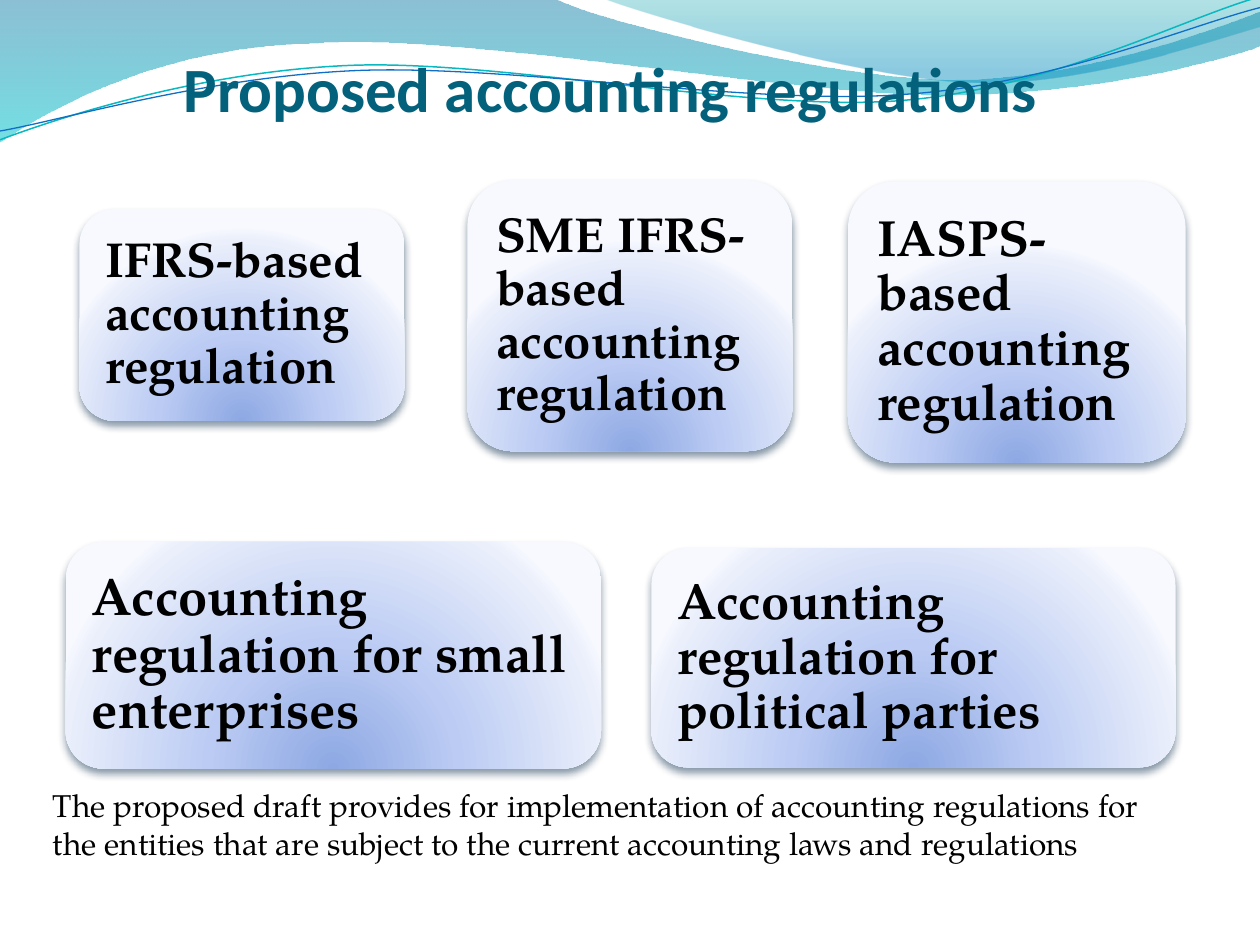
from dataclasses import dataclass
from math import cos, radians, sin

from lxml import etree
from pptx import Presentation
from pptx.dml.color import RGBColor
from pptx.enum.shapes import MSO_SHAPE
from pptx.enum.text import MSO_ANCHOR, PP_ALIGN
from pptx.oxml.ns import nsdecls, qn
from pptx.util import Inches, Pt

ROUNDED = MSO_SHAPE.ROUNDED_RECTANGLE
TOP, MIDDLE, BOTTOM = MSO_ANCHOR.TOP, MSO_ANCHOR.MIDDLE, MSO_ANCHOR.BOTTOM
LEFT, CENTER = PP_ALIGN.LEFT, PP_ALIGN.CENTER
CORNER_INSET = 0.05
CURVE_ROTATION = 357.3


@dataclass(frozen=True)
class Theme:
    """Colours, fonts and type sizes of the slide."""
    title_font: str = "Calibri"
    body_font: str = "TeX Gyre Pagella"
    title_color: str = "04617B"
    text_color: str = "000000"
    shadow_color: str = "042747"
    title_size: int = 36
    note_size: int = 18
    card_stops: tuple = ((0, "8DA8E3", 100), (43, "BBCBF3", 100),
                         (93, "EAEFFB", 100), (100, "F7F9FF", 100))
    wide_wave_stops: tuple = ((0, "0074A1", 45), (100, "00C6CF", 55))
    right_wave_stops: tuple = ((0, "00A1A9", 30), (80, "008BBF", 45))
    teal_line: str = "0AB8BF"
    blue_line: str = "0F6FC6"


THEME = Theme()
DOWNWARD = '<a:lin ang="5400000" scaled="0"/>'
FROM_BELOW = ('<a:path path="circle"><a:fillToRect l="50000" t="130000" '
              'r="50000" b="-30000"/></a:path>')

WIDE_WAVE = [
    (0, 0), (4.4, -0.01),
    (4.76, 0.17, 6.64, 0.63, 7.58, 0.63), (8.53, 0.63, 9.58, 0.26, 10, 0.09),
    (10.01, 0.36),
    (9.83, 0.44, 8.7, 0.76, 7.46, 0.75), (6.22, 0.75, 3.82, 0.28, 2.57, 0.34),
    (1.29, 0.36, 0.46, 0.83, -0.01, 1.13), (0, 0),
]
RIGHT_WAVE = [
    (4.79, -0.01), (5.09, 0.11, 6.82, 0.62, 7.69, 0.65),
    (8.56, 0.69, 9.61, 0.32, 10, 0.21), (10, 0), (4.79, -0.01),
]
TEAL_CURVE = [
    (0, 1.11), (0.48, 0.93, 1.58, 0.57, 2.77, 0.52),
    (3.95, 0.47, 5.93, 0.89, 7.13, 0.8), (8.33, 0.71, 9.38, 0.15, 9.98, -0.02),
]
BLUE_CURVE = [
    (0, 1.04), (0.47, 0.96, 1.64, 0.61, 2.83, 0.56),
    (4.03, 0.51, 5.97, 0.84, 7.17, 0.75), (8.36, 0.67, 9.41, 0.21, 10, 0.06),
]
CARDS = [
    ("IFRS-based accounting regulation", (0.63, 1.66, 2.58, 1.68), 28),
    ("SME IFRS-based accounting regulation", (3.71, 1.43, 2.58, 2.15), 28),
    ("IASPS-based accounting regulation", (6.73, 1.44, 2.68, 2.23), 29),
    ("Accounting regulation for small enterprises", (0.52, 4.3, 4.25, 1.8), 30),
    ("Accounting regulation for political parties", (5.17, 4.35, 4.16, 1.74), 29),
]
NOTE = ("The proposed draft provides for implementation of accounting regulations for "
        "the entities that are subject to the current accounting laws and regulations")


def local_points(segment, box, rotation):
    """Return the points of a segment inside its box before the box is turned."""
    left, top, width, height = box
    cosine, sine = cos(radians(-rotation)), sin(radians(-rotation))
    points = []
    for x, y in zip(segment[::2], segment[1::2]):
        across, down = x - left - width / 2, y - top - height / 2
        points.append((Inches(across * cosine - down * sine + width / 2),
                       Inches(across * sine + down * cosine + height / 2)))
    return points


def add_path(slide, segments, box, closed, rotation=0):
    """Add a freeform of lines and cubic curves without fill, line or shadow."""
    outlines = [local_points(segment, box, rotation) for segment in segments]
    ends = [points[-1] for points in outlines]
    builder = slide.shapes.build_freeform(*ends[0])
    builder.add_line_segments(ends[1:], close=closed)
    shape = builder.convert_to_shape()
    shape.left, shape.top, shape.width, shape.height = map(Inches, box)
    shape.rotation = rotation
    outline = next(shape._element.iter(qn("a:path")))
    outline.set("w", str(shape.width))
    outline.set("h", str(shape.height))
    for command, points in zip(list(outline), outlines):
        tag = {"a:moveTo": "a:moveTo"}.get("a:" + etree.QName(command).localname, "a:lnTo")
        replacement = etree.SubElement(outline, qn("a:cubicBezTo" if len(points) == 3 else tag))
        for x, y in points:
            etree.SubElement(replacement, qn("a:pt"), x=str(x), y=str(y))
        outline.replace(command, replacement)
    shape.shadow.inherit = False
    shape.fill.background()
    shape.line.fill.background()
    return shape


def set_gradient(shape, stops, direction):
    """Fill a shape with a gradient whose stops carry an opacity."""
    shape.fill.background()
    stop_xml = "".join(
        f'<a:gs pos="{position * 1000}"><a:srgbClr val="{color}">'
        f'<a:alpha val="{opacity * 1000}"/></a:srgbClr></a:gs>'
        for position, color, opacity in stops)
    gradient = etree.fromstring(
        f'<a:gradFill {nsdecls("a")} rotWithShape="1"><a:gsLst>{stop_xml}</a:gsLst>'
        f'{direction}</a:gradFill>')
    properties = shape._element.spPr
    properties.replace(properties.find(qn("a:noFill")), gradient)


def add_wave(slide, segments, box, stops):
    """Add a translucent wave at the top of the slide."""
    set_gradient(add_path(slide, segments, box, True), stops, DOWNWARD)


def add_curve(slide, segments, box, color, width):
    """Add a thin curved line."""
    line = add_path(slide, segments, box, False, CURVE_ROTATION).line
    line.color.rgb = RGBColor.from_string(color)
    line.width = Pt(width)


def add_label(parent, text, box, font_format, insets, anchor, alignment=LEFT, spacing=None):
    """Add a text box with one formatted paragraph."""
    frame = parent.shapes.add_textbox(*map(Inches, box)).text_frame
    frame.word_wrap = True
    frame.vertical_anchor = anchor
    for side, inset in zip(("left", "top", "right", "bottom"), insets):
        setattr(frame, f"margin_{side}", Inches(inset))
    paragraph = frame.paragraphs[0]
    paragraph.text = text
    paragraph.alignment = alignment
    paragraph.line_spacing = spacing
    values = {"name": THEME.body_font, "color": THEME.text_color} | font_format
    font = paragraph.runs[0].font
    font.color.rgb = RGBColor.from_string(values.pop("color"))
    for attribute, value in values.items():
        setattr(font, attribute, value)


def add_card(slide, text, box, size):
    """Add a group of a rounded card with soft shadow and its bold text."""
    group = slide.shapes.add_group_shape()
    shape = group.shapes.add_shape(ROUNDED, *map(Inches, box))
    shape.line.fill.background()
    set_gradient(shape, THEME.card_stops, FROM_BELOW)
    shape.shadow.inherit = False
    effects = shape._element.spPr.find(qn("a:effectLst"))
    effects.append(etree.fromstring(
        f'<a:outerShdw {nsdecls("a")} blurRad="{Pt(4.5)}" dist="{Pt(3)}" dir="5400000" '
        f'rotWithShape="0"><a:srgbClr val="{THEME.shadow_color}">'
        '<a:alpha val="48000"/></a:srgbClr></a:outerShdw>'))
    left, top, width, height = box
    inset = CORNER_INSET * min(width, height)
    inner = (left + inset, top + inset, width - 2 * inset, height - 2 * inset)
    add_label(group, text, inner, {"size": Pt(size), "bold": True}, (0.12,) * 4, MIDDLE,
              spacing=0.9)


def main():
    """Build and save the slide."""
    presentation = Presentation()
    presentation.slide_width, presentation.slide_height = Inches(10), Inches(7.5)
    slide = presentation.slides.add_slide(presentation.slide_layouts[6])
    add_wave(slide, WIDE_WAVE, (-0.01, -0.01, 10.02, 1.14), THEME.wide_wave_stops)
    add_wave(slide, RIGHT_WAVE, (4.79, -0.01, 5.21, 0.7), THEME.right_wave_stops)
    add_curve(slide, TEAL_CURVE, (-0.02, 0.22, 10.02, 0.71), THEME.teal_line, 0.85)
    add_curve(slide, BLUE_CURVE, (-0.02, 0.3, 10.03, 0.58), THEME.blue_line, 0.75)
    title_format = {"name": THEME.title_font, "size": Pt(THEME.title_size),
                    "bold": True, "color": THEME.title_color}
    add_label(slide, "Proposed accounting regulations", (0.52, 0.31, 8.65, 0.68),
              title_format, (0, 0.05, 0, 0), BOTTOM, CENTER)
    for text, box, size in CARDS:
        add_card(slide, text, box, size)
    add_label(slide, NOTE, (0.32, 6.19, 9.05, 0.71), {"size": Pt(THEME.note_size)},
              (0.1, 0.05, 0.1, 0.05), TOP)
    presentation.save("out.pptx")


if __name__ == "__main__":
    main()
